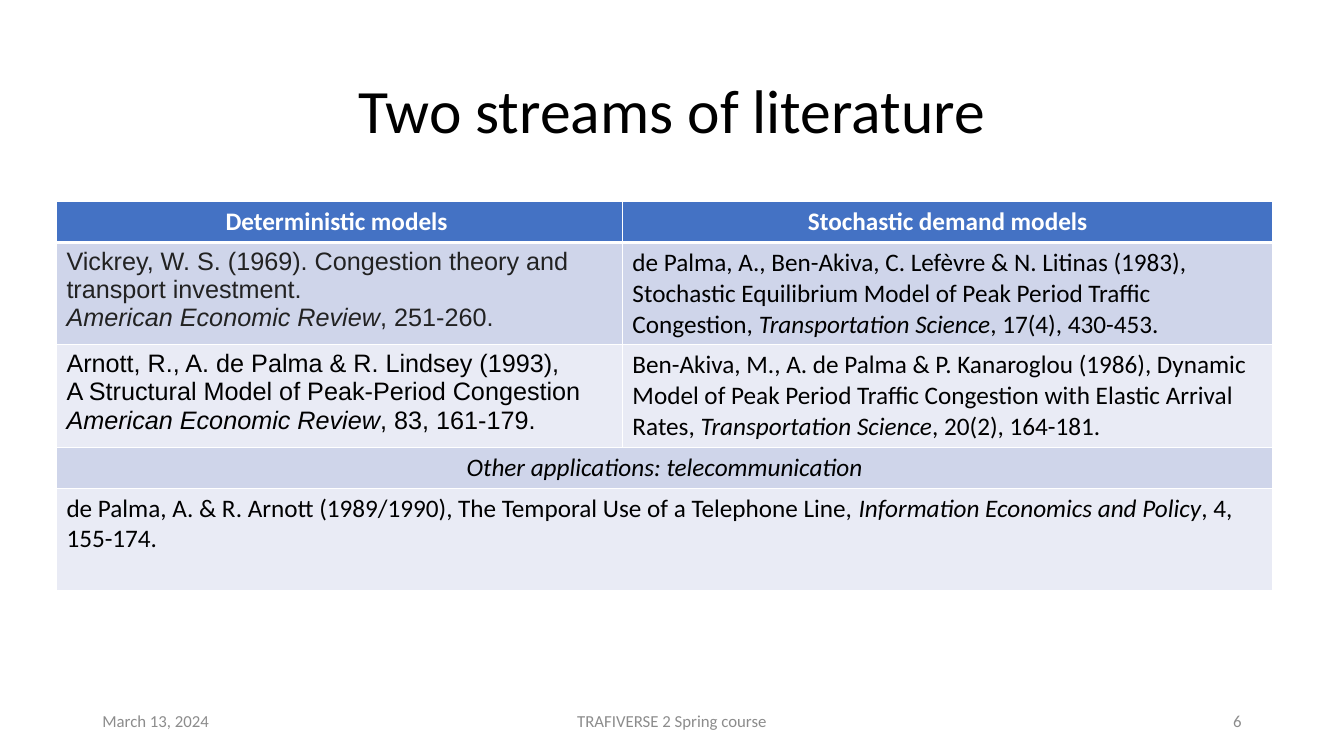
"""Build the slide comparing two streams of literature in a table."""
from lxml import etree
from pptx import Presentation
from pptx.dml.color import RGBColor
from pptx.enum.text import MSO_ANCHOR, PP_ALIGN
from pptx.oxml.ns import qn
from pptx.util import Pt

LEFT, CENTER, RIGHT = PP_ALIGN.LEFT, PP_ALIGN.CENTER, PP_ALIGN.RIGHT
MIDDLE = MSO_ANCHOR.MIDDLE
WHITE = RGBColor(0xFF, 0xFF, 0xFF)
BLACK = RGBColor(0x00, 0x00, 0x00)
CHARCOAL = RGBColor(0x22, 0x22, 0x22)
GREY = RGBColor(0x8C, 0x8C, 0x8C)
HEADER_BLUE = RGBColor(0x44, 0x72, 0xC4)
BAND_DARK = RGBColor(0xCF, 0xD5, 0xEA)
BAND_LIGHT = RGBColor(0xE9, 0xEB, 0xF5)


def format_run(run, size, color, font="Calibri", bold=False, italic=False):
    run.font.size = Pt(size)
    run.font.color.rgb = color
    run.font.name = font
    run.font.bold = bold
    run.font.italic = italic


def write_citation(cell, lines, align, color, font, bold):
    """Write one paragraph per line, with the parts between asterisks in italics."""
    cell.text_frame.text = "\n".join("" for _ in lines)
    for paragraph, line in zip(cell.text_frame.paragraphs, lines):
        paragraph.alignment = align
        for index, part in enumerate(line.split("*")):
            if part:
                run = paragraph.add_run()
                run.text = part
                format_run(run, 18, color, font, bold, index % 2 == 1)


prs = Presentation()
prs.slide_width, prs.slide_height = Pt(960), Pt(540)
slide = prs.slides.add_slide(prs.slide_layouts[5])

title = slide.shapes.title
title.left, title.top, title.width, title.height = Pt(66), Pt(28.8), Pt(828), Pt(104.4)
title.text_frame.text = "Two streams of literature"
title.text_frame.vertical_anchor = MIDDLE
heading = title.text_frame.paragraphs[0]
heading.alignment = CENTER
heading.line_spacing = 0.9
format_run(heading.runs[0], 44, BLACK)

COLUMN_WIDTHS = [404.3, 464.7]
ROW_HEIGHTS = [29.2, 73, 72.6, 29.2, 73.4]
ROW_FILLS = [HEADER_BLUE, BAND_DARK, BAND_LIGHT, BAND_DARK, BAND_LIGHT]
CITATIONS = [
    (0, 0, CENTER, WHITE, "Calibri", ["Deterministic models "]),
    (0, 1, CENTER, WHITE, "Calibri", ["Stochastic demand models"]),
    (1, 0, LEFT, CHARCOAL, "Arial", [
        "Vickrey, W. S. (1969). Congestion theory and",
        "transport investment.",
        "*American Economic Review*, 251-260."]),
    (1, 1, LEFT, BLACK, "Calibri", [
        "de Palma, A., Ben-Akiva, C. Lefèvre & N. Litinas (1983), Stochastic Equilibrium "
        "Model of Peak Period Traffic Congestion, *Transportation Science*, 17(4), 430-453."]),
    (2, 0, LEFT, BLACK, "Arial", [
        "Arnott, R., A. de Palma & R. Lindsey (1993),",
        "A Structural Model of Peak-Period Congestion",
        "*American Economic Review*, 83, 161-179."]),
    (2, 1, LEFT, BLACK, "Calibri", [
        "Ben-Akiva, M., A. de Palma & P. Kanaroglou (1986), Dynamic Model of Peak Period Traffic "
        "Congestion with Elastic Arrival Rates, *Transportation Science*, 20(2), 164-181."]),
    (3, 0, CENTER, BLACK, "Calibri", ["*Other applications: telecommunication*"]),
    (4, 0, LEFT, BLACK, "Calibri", [
        "de Palma, A. & R. Arnott (1989/1990), The Temporal Use of a Telephone Line, "
        "*Information Economics and Policy*, 4, 155-174."]),
]

literature = slide.shapes.add_table(
    len(ROW_HEIGHTS), len(COLUMN_WIDTHS), Pt(40.3), Pt(144),
    Pt(sum(COLUMN_WIDTHS)), Pt(sum(ROW_HEIGHTS))).table
for column, width in zip(literature.columns, COLUMN_WIDTHS):
    column.width = Pt(width)
for row, height, fill in zip(literature.rows, ROW_HEIGHTS, ROW_FILLS):
    row.height = Pt(height)
    for cell in row.cells:
        cell.fill.solid()
        cell.fill.fore_color.rgb = fill
for header_cell in literature.rows[0].cells:
    rule = etree.Element(qn("a:lnB"), w=str(Pt(3)))
    rule_fill = etree.SubElement(rule, qn("a:solidFill"))
    etree.SubElement(rule_fill, qn("a:srgbClr"), val=str(WHITE))
    header_cell._tc.get_or_add_tcPr().insert(0, rule)
for row_index in (3, 4):
    literature.cell(row_index, 0).merge(literature.cell(row_index, 1))
for row_index, column_index, align, color, font, lines in CITATIONS:
    write_citation(literature.cell(row_index, column_index), lines, align, color, font,
                   row_index == 0)

FOOTERS = [
    ("March 13, 2024", 66, 216, LEFT),
    ("TRAFIVERSE 2 Spring course", 318, 324, CENTER),
    ("6", 678, 216, RIGHT),
]
for wording, left, width, align in FOOTERS:
    footer = slide.shapes.add_textbox(Pt(left), Pt(500.5), Pt(width), Pt(28.8)).text_frame
    footer.word_wrap = True
    footer.vertical_anchor = MIDDLE
    footer.text = wording
    footer.paragraphs[0].alignment = align
    format_run(footer.paragraphs[0].runs[0], 12, GREY)

prs.save("out.pptx")
